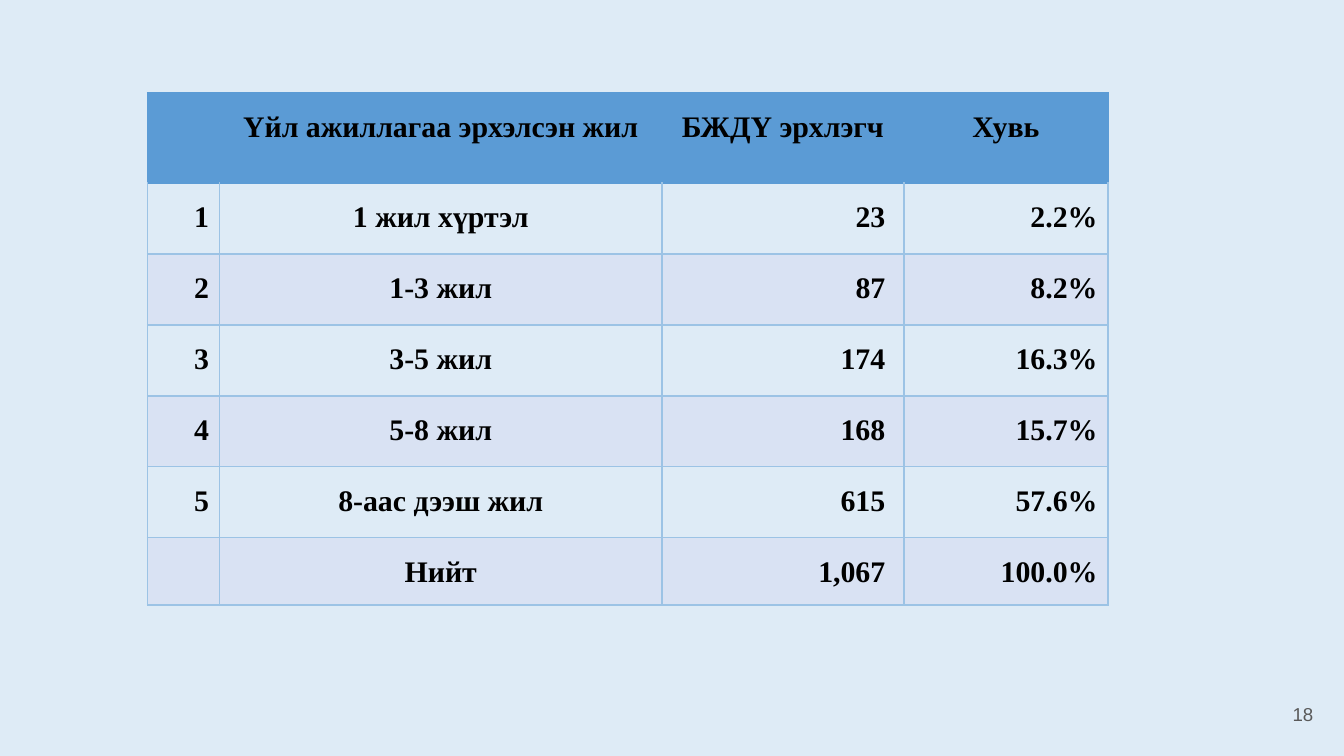
from dataclasses import dataclass

from lxml import etree
from pptx import Presentation
from pptx.dml.color import RGBColor
from pptx.enum.text import MSO_ANCHOR, PP_ALIGN
from pptx.oxml.ns import qn
from pptx.util import Cm, Pt

CENTER, RIGHT = PP_ALIGN.CENTER, PP_ALIGN.RIGHT
MIDDLE = MSO_ANCHOR.MIDDLE


@dataclass(frozen=True)
class Theme:
    background: str = "DEEBF6"
    header: str = "5B9BD5"
    band: str = "D9E2F3"
    border: str = "9CC3E5"
    text: str = "000000"
    muted: str = "595959"
    table_font: str = "Times New Roman"
    number_font: str = "Arial"
    table_size: int = 16
    number_size: int = 10


THEME = Theme()

ROWS = [
    ("", "Үйл ажиллагаа эрхэлсэн жил", "БЖДҮ эрхлэгч", "Хувь"),
    ("1", "1 жил хүртэл", "23", "2.2%"),
    ("2", "1-3 жил", "87", "8.2%"),
    ("3", "3-5 жил", "174", "16.3%"),
    ("4", "5-8 жил", "168", "15.7%"),
    ("5", "8-аас дээш жил", "615", "57.6%"),
    ("", "Нийт", "1,067", "100.0%"),
]
COL_WIDTHS = [1.36, 8.36, 4.57, 3.86]
ROW_HEIGHTS = [1.7] + [1.34] * 5 + [1.23]
COL_ALIGN = [RIGHT, CENTER, RIGHT, RIGHT]
COL_RIGHT_MARGIN = [0.2, 0.2, 0.35, 0.2]


def set_attrs(obj, values):
    for name, value in values.items():
        setattr(obj, name, value)


def set_fill(fill, color):
    fill.solid()
    fill.fore_color.rgb = RGBColor.from_string(color)


def write_text(tf, text, align, color, font, line_spacing=1.0):
    p = tf.paragraphs[0]
    set_attrs(p, {"alignment": align, "line_spacing": line_spacing})
    r = p.add_run()
    r.text = text
    set_attrs(r.font, font)
    r.font.color.rgb = RGBColor.from_string(color)


def set_borders(cell, colors):
    """Draw 1 pt borders; colors maps the sides L, R, T, B in that order."""
    tc_pr = cell._tc.get_or_add_tcPr()
    for side, color in colors.items():
        ln = etree.SubElement(tc_pr, qn(f"a:ln{side}"), w=str(Pt(1)))
        fill = etree.SubElement(ln, qn("a:solidFill"))
        etree.SubElement(fill, qn("a:srgbClr"), val=color)


def format_cell(cell, row, col, text):
    is_header = row == 0
    line = THEME.header if is_header else THEME.border
    borders = dict.fromkeys("LRTB", line)
    if row == 1:
        borders["T"] = THEME.header
    set_borders(cell, borders)
    body = THEME.background if row % 2 else THEME.band
    set_fill(cell.fill, THEME.header if is_header else body)
    if not text:
        return
    right = 0.2 if is_header else COL_RIGHT_MARGIN[col]
    set_attrs(cell, {
        "margin_left": Cm(0.2), "margin_right": Cm(right),
        "margin_top": Cm(0.25), "margin_bottom": Cm(0.25),
    })
    font = {"name": THEME.table_font, "size": Pt(THEME.table_size), "bold": True}
    align = CENTER if is_header else COL_ALIGN[col]
    write_text(cell.text_frame, text, align, THEME.text, font, 1.15)


def add_years_table(s):
    frame = s.shapes.add_table(
        len(ROWS), len(COL_WIDTHS), Cm(2.79), Cm(1.76),
        Cm(sum(COL_WIDTHS)), Cm(sum(ROW_HEIGHTS)))
    table = frame.table
    set_attrs(table, {"first_row": False, "horz_banding": False})
    for column, width in zip(table.columns, COL_WIDTHS):
        column.width = Cm(width)
    for row, height in zip(table.rows, ROW_HEIGHTS):
        row.height = Cm(height)
    for i, texts in enumerate(ROWS):
        for j, text in enumerate(texts):
            format_cell(table.cell(i, j), i, j, text)


def add_slide_number(s, number):
    sp = s.shapes.add_textbox(Cm(23.55), Cm(12.95), Cm(1.52), Cm(1.09))
    tf = sp.text_frame
    margins = ("margin_left", "margin_right", "margin_top", "margin_bottom")
    set_attrs(tf, dict.fromkeys(margins, Cm(0.25)))
    set_attrs(tf, {"word_wrap": True, "vertical_anchor": MIDDLE})
    font = {"name": THEME.number_font, "size": Pt(THEME.number_size)}
    write_text(tf, number, RIGHT, THEME.muted, font)


def main():
    prs = Presentation()
    set_attrs(prs, {"slide_width": Cm(25.4), "slide_height": Cm(14.29)})
    s = prs.slides.add_slide(prs.slide_layouts[6])
    set_fill(s.background.fill, THEME.background)
    add_slide_number(s, "18")
    add_years_table(s)
    prs.save("out.pptx")


if __name__ == "__main__":
    main()
